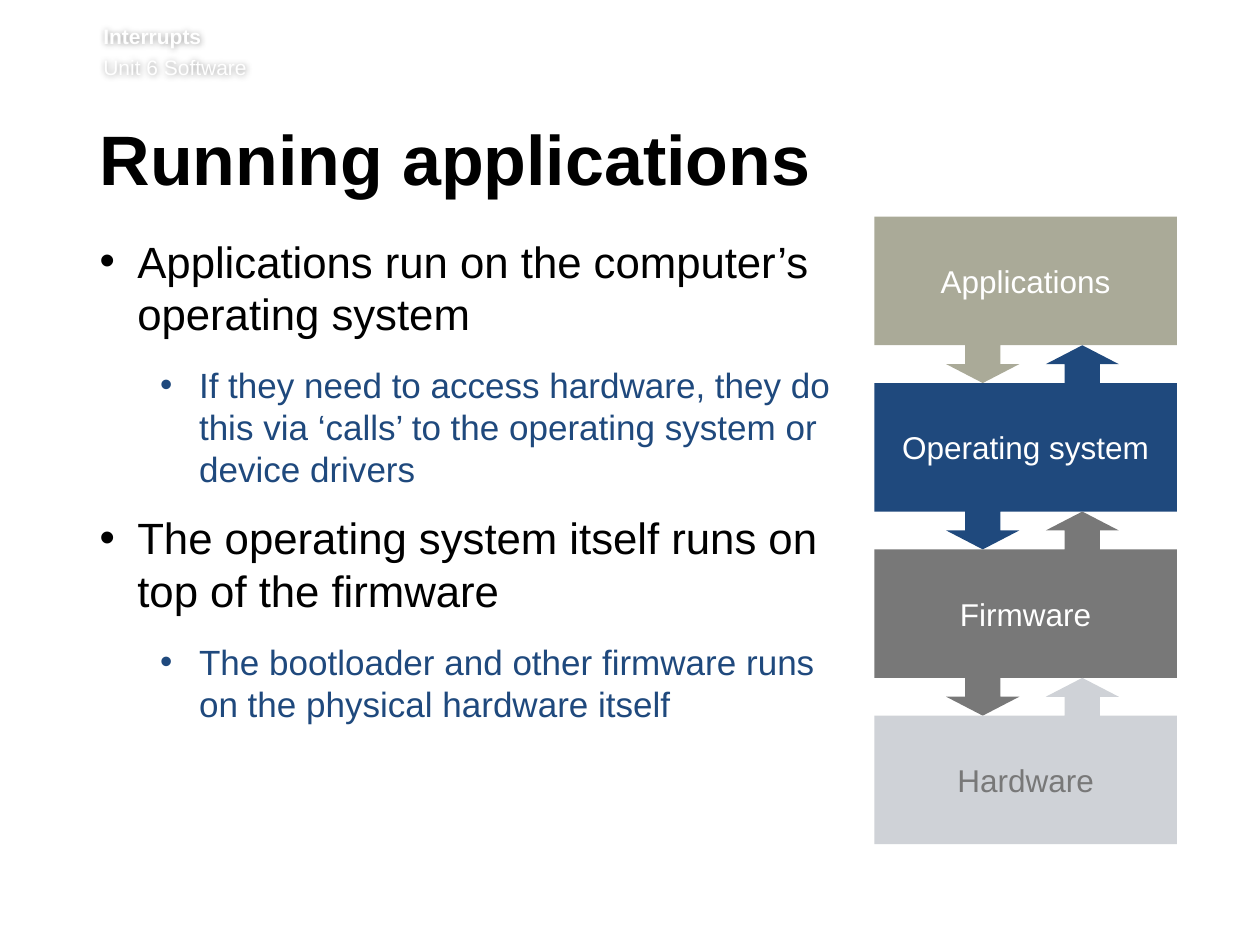
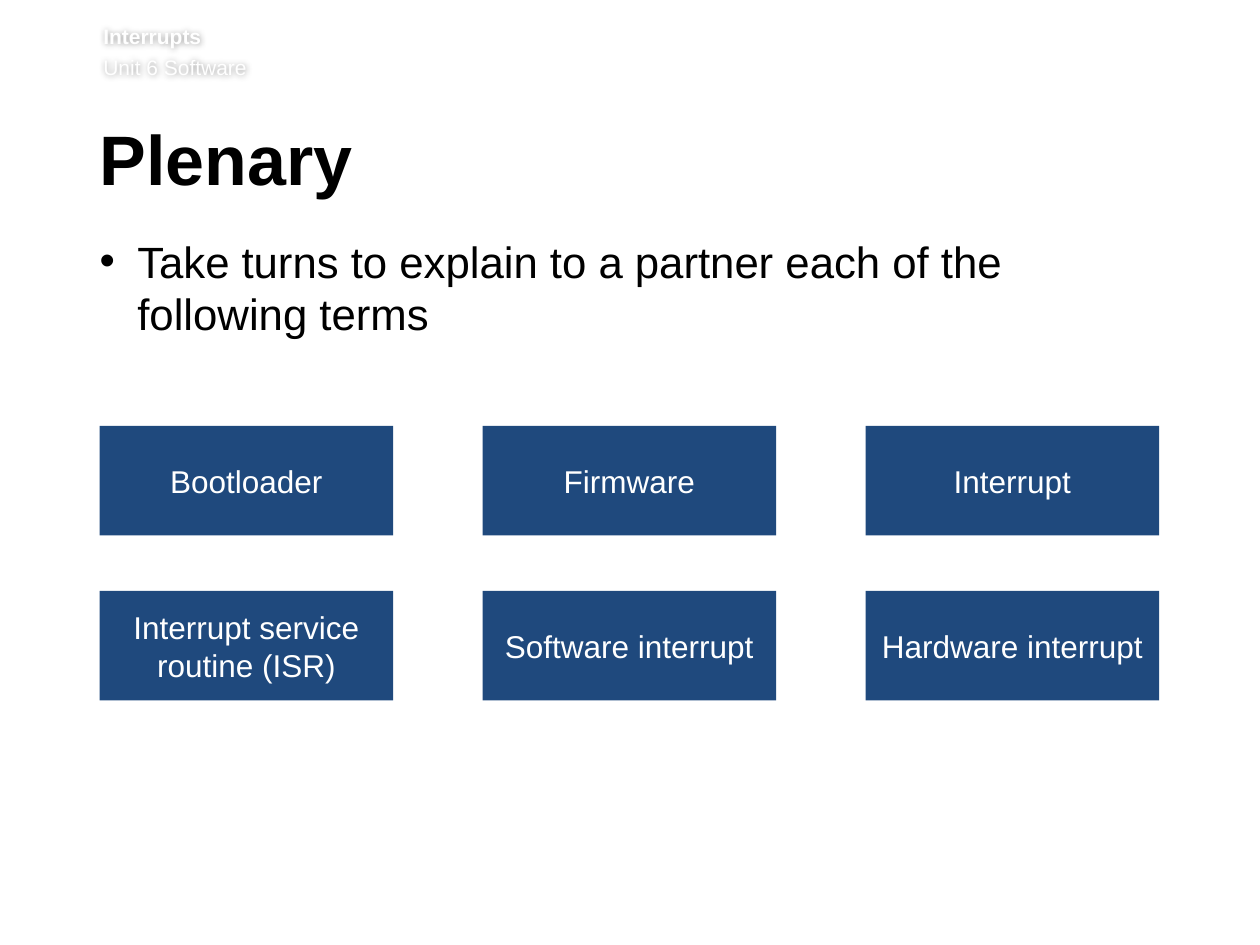
"""Build two lesson slides on running applications and interrupt terms."""
from dataclasses import dataclass

from lxml import etree
from pptx import Presentation
from pptx import util as u
from pptx.dml.color import RGBColor
from pptx.enum import shapes, text
from pptx.oxml import ns


@dataclass(frozen=True)
class Theme:
    font: str = "Arial"
    black: str = "000000"
    white: str = "FFFFFF"
    navy: str = "1F497D"
    olive: str = "AAAA98"
    grey: str = "787878"
    pale: str = "CFD2D7"
    title: int = 40
    body: int = 25
    sub: int = 20
    box: int = 18
    header: int = 12


T = Theme()
LEFT = 0.79
LEVELS = [
    dict(size=T.body, color=T.black, line=30, after=14, indent=(0.3, -0.3)),
    dict(size=T.sub, color=T.navy, line=24, after=12, indent=(0.79, -0.31)),
]


def write(tf, words, size, color, bold=False, align=text.PP_ALIGN.LEFT,
          line=None, before=0, after=0, indent=None):
    p = tf.paragraphs[0]
    if p.runs:
        p = tf.add_paragraph()
    p.alignment = align
    p.space_before, p.space_after = u.Pt(before), u.Pt(after)
    if line:
        p.line_spacing = u.Pt(line)
    if indent:
        pPr = p._p.get_or_add_pPr()
        pPr.set("marL", str(u.Inches(indent[0])))
        pPr.set("indent", str(u.Inches(indent[1])))
        etree.SubElement(pPr, ns.qn("a:buFont"), typeface=T.font)
        etree.SubElement(pPr, ns.qn("a:buChar"), char="•")
    r = p.add_run()
    r.text = words
    r.font.name, r.font.size, r.font.bold = T.font, u.Pt(size), bold
    r.font.color.rgb = RGBColor.from_string(color)


def style(sp, fill=None, margins=(0.1, 0.05, 0.1, 0.05)):
    tf = sp.text_frame
    tf.word_wrap = True
    (tf.margin_left, tf.margin_top,
     tf.margin_right, tf.margin_bottom) = [u.Inches(m) for m in margins]
    if fill:
        sp.shadow.inherit = False
        sp.fill.solid()
        sp.fill.fore_color.rgb = RGBColor.from_string(fill)
        sp.line.fill.background()
        tf.vertical_anchor = text.MSO_ANCHOR.MIDDLE
    return tf


prs = Presentation()
prs.slide_width, prs.slide_height = u.Inches(10), u.Inches(7.5)

pages = [
    ("Running applications", 5.94, [
        (0, "Applications run on the computer’s operating system"),
        (1, "If they need to access hardware, they do this via ‘calls’ "
            "to the operating system or device drivers"),
        (0, "The operating system itself runs on top of the firmware"),
        (1, "The bootloader and other firmware runs on the physical "
            "hardware itself"),
    ]),
    ("Plenary", 8.53, [
        (0, "Take turns to explain to a partner each of the following terms"),
    ]),
]
slides = []
for title, body_width, bullets in pages:
    s = prs.slides.add_slide(prs.slide_layouts[6])
    slides.append(s)

    sp = s.shapes.add_textbox(*map(u.Inches, (0.82, 0.19, 8.82, 0.49)))
    effects = etree.SubElement(sp._element.spPr, ns.qn("a:effectLst"))
    shadow = etree.SubElement(effects, ns.qn("a:outerShdw"),
                              blurRad=str(u.Pt(4)), dist="0", algn="ctr")
    black = etree.SubElement(shadow, ns.qn("a:srgbClr"), val=T.black)
    etree.SubElement(black, ns.qn("a:alpha"), val="40000")
    tf = style(sp, margins=(0, 0, 0, 0.05))
    write(tf, "Interrupts", T.header, T.white, bold=True)
    write(tf, "Unit 6 Software", T.header, T.white, before=2.9)

    sp = s.shapes.add_textbox(*map(u.Inches, (LEFT, 0.99, 8.55, 0.73)))
    tf = style(sp, margins=(0, 0.05, 0.1, 0.05))
    write(tf, title, T.title, T.black, bold=True, line=39, after=15)

    sp = s.shapes.add_textbox(*map(u.Inches, (LEFT, 1.86, body_width, 5.64)))
    tf = style(sp, margins=(0, 0, 0.1, 0.05))
    for level, words in bullets:
        write(tf, words, **LEVELS[level])

layers = [
    ("Applications", T.olive, T.white),
    ("Operating system", T.navy, T.white),
    ("Firmware", T.grey, T.white),
    ("Hardware", T.pale, T.grey),
]
left, right, first_top = 6.94, 9.34, 1.72
height, gap = 1.02, 0.3
down_x, up_x, shaft, head = 7.8, 8.59, 0.14, 0.29
for i, (words, fill, color) in enumerate(layers):
    has_up, has_down = i > 0, i < len(layers) - 1
    top = first_top + i * (height + gap)
    bottom = top + height
    outline = [(left, top)]
    if has_up:
        neck = top - gap / 2
        outline += [(up_x - shaft, top), (up_x - shaft, neck),
                    (up_x - head, neck), (up_x, top - gap),
                    (up_x + head, neck), (up_x + shaft, neck),
                    (up_x + shaft, top)]
    outline += [(right, top), (right, bottom)]
    if has_down:
        neck = bottom + gap / 2
        outline += [(down_x + shaft, bottom), (down_x + shaft, neck),
                    (down_x + head, neck), (down_x, bottom + gap),
                    (down_x - head, neck), (down_x - shaft, neck),
                    (down_x - shaft, bottom)]
    outline.append((left, bottom))
    points = [(u.Inches(x), u.Inches(y)) for x, y in outline]
    builder = slides[0].shapes.build_freeform(*points[0])
    builder.add_line_segments(points[1:], close=True)
    sp = builder.convert_to_shape()
    tf = style(sp, fill, (0.1, 0.05 + gap * has_up, 0.1, 0.05 + gap * has_down))
    write(tf, words, T.box, color, align=text.PP_ALIGN.CENTER)

terms = ["Bootloader", "Firmware", "Interrupt",
         "Interrupt service routine (ISR)", "Software interrupt",
         "Hardware interrupt"]
for i, term in enumerate(terms):
    row, col = divmod(i, 3)
    sp = slides[1].shapes.add_shape(
        shapes.MSO_SHAPE.RECTANGLE, u.Inches(LEFT + col * 3.04),
        u.Inches(3.38 + row * 1.31), u.Inches(2.33), u.Inches(0.87))
    write(style(sp, T.navy), term, T.box, T.white, align=text.PP_ALIGN.CENTER)

prs.save("out.pptx")
